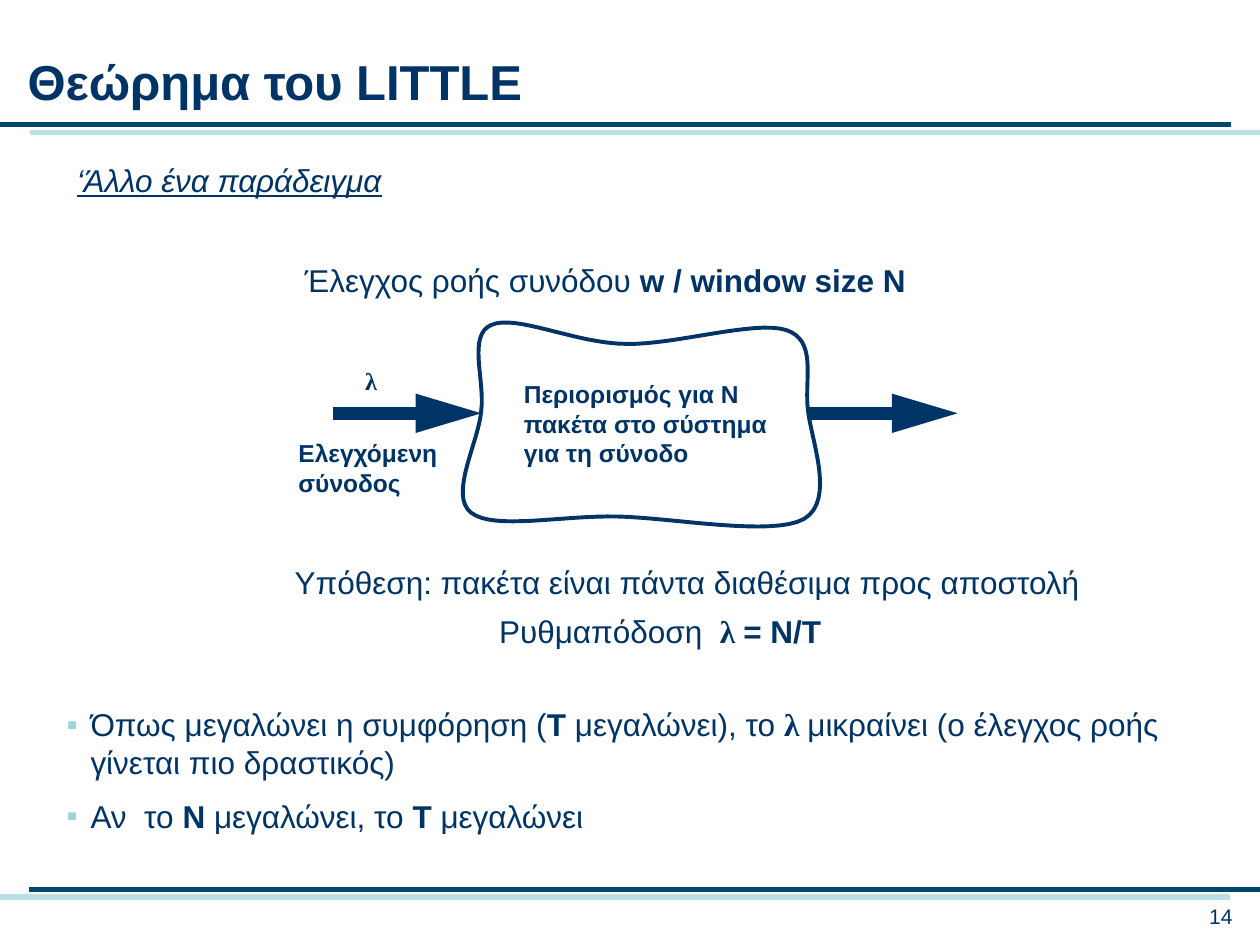
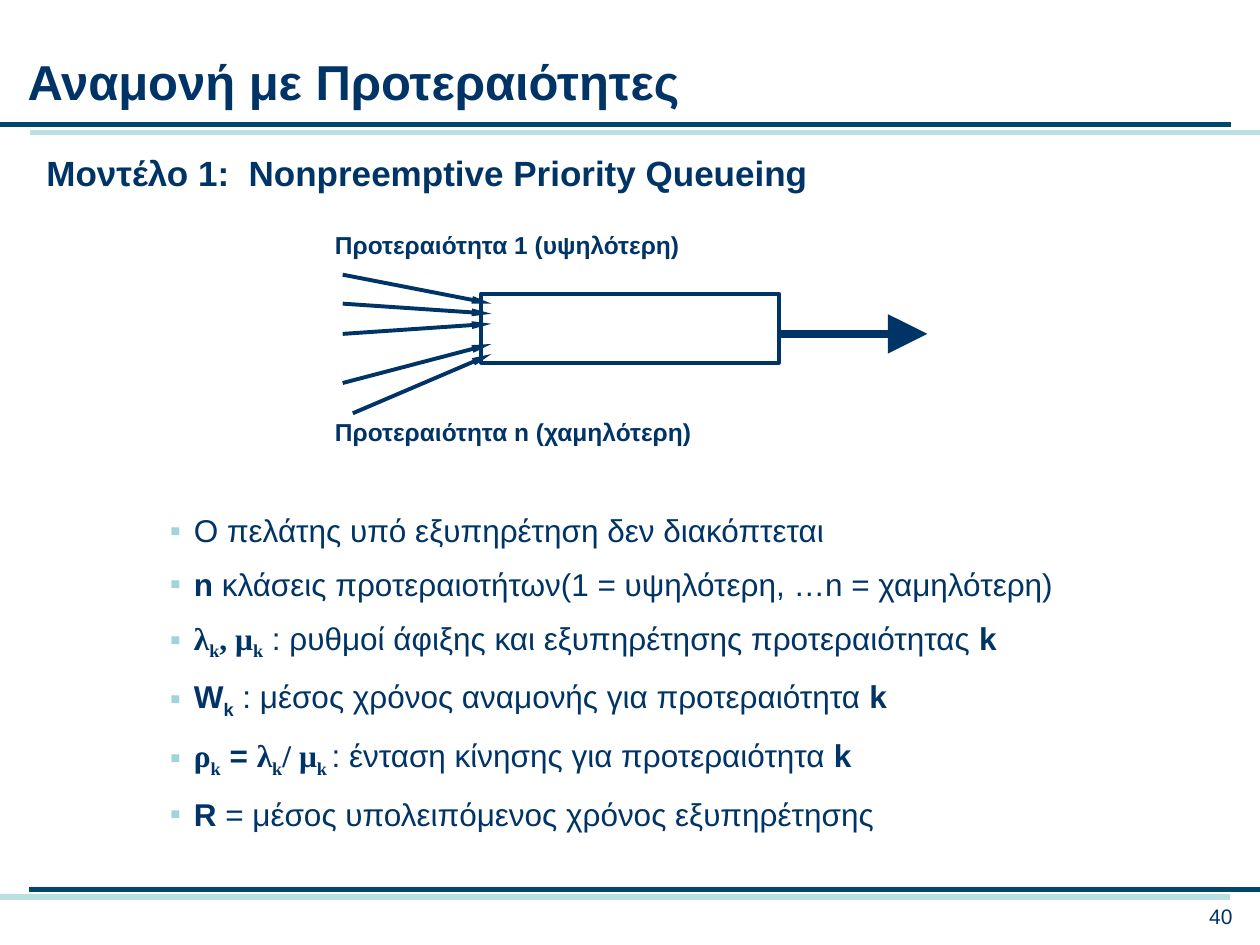
import pptx
import pptx.util
import pptx.dml.color
import pptx.enum.shapes
import pptx.enum.text
import pptx.oxml.ns
import lxml.etree

Inches = pptx.util.Inches
colour = pptx.dml.color.RGBColor.from_string
qn = pptx.oxml.ns.qn
STRAIGHT = pptx.enum.shapes.MSO_CONNECTOR.STRAIGHT
ALIGN = pptx.enum.text.PP_ALIGN

NAVY = "003366"
RULE = "00476A"
PALE = "BBE0E3"
BULLET = "A0D4D8"
FORMATS = {
    "b": {"bold": True},
    "i": {"italic": True},
    "u": {"underline": True},
    "t": {"name": "Times New Roman"},
}


def write(slide, place, paragraphs, size, align=ALIGN.LEFT, bullets=False):
    box = slide.shapes.add_textbox(*[Inches(length) for length in place])
    frame = box.text_frame
    frame.word_wrap = True
    for index, spans in enumerate(paragraphs):
        para = frame.add_paragraph() if index else frame.paragraphs[0]
        para.alignment = align
        if index:
            para.space_before = pptx.util.Pt(9)
        if bullets:
            properties = para._p.get_or_add_pPr()
            properties.set("marL", str(Inches(0.19)))
            properties.set("indent", str(Inches(-0.19)))
            tint = lxml.etree.SubElement(properties, qn("a:buClr"))
            lxml.etree.SubElement(tint, qn("a:srgbClr"), val=BULLET)
            lxml.etree.SubElement(properties, qn("a:buFont"), typeface="Arial")
            lxml.etree.SubElement(properties, qn("a:buChar"), char="▪")
        for text, marks in spans:
            span = para.add_run()
            span.text = text
            values = {"name": "Arial", "size": pptx.util.Pt(size)}
            for mark in marks:
                values.update(FORMATS.get(mark, {}))
            for name, value in values.items():
                setattr(span.font, name, value)
            span.font.color.rgb = colour(NAVY)
            if "s" in marks:
                span._r.get_or_add_rPr().set("baseline", "-25000")


def stroke(shape, width, hex_value=NAVY, head_width=None):
    if hasattr(shape, "fill"):
        shape.fill.background()
    shape.line.color.rgb = colour(hex_value)
    shape.line.width = pptx.util.Pt(width)
    properties = shape._element.spPr
    if head_width:
        lxml.etree.SubElement(properties.find(qn("a:ln")), qn("a:tailEnd"),
                              type="triangle", w=head_width, len="lg")
    lxml.etree.SubElement(properties, qn("a:effectLst"))


deck = pptx.Presentation()
deck.slide_width = Inches(10)
deck.slide_height = Inches(7.5)

rules = [
    (0.24, 10, 1.05, PALE),
    (0, 9.77, 0.99, RULE),
    (0, 9.76, 7.12, PALE),
    (0.23, 10, 7.06, RULE),
]
pages = []
for title, number in [("Θεώρημα του LITTLE", "14"), ("Αναμονή με Προτεραιότητες", "40")]:
    page = deck.slides.add_slide(deck.slide_layouts[6])
    pages.append(page)
    for left, right, height, hex_value in rules:
        rule = page.shapes.add_connector(
            STRAIGHT, Inches(left), Inches(height), Inches(right), Inches(height))
        stroke(rule, 3, hex_value)
    write(page, (0.12, 0.36, 9.29, 0.57), [[(title, "b")]], 28)
    write(page, (8.78, 7.12, 1.1, 0.3), [[(number, "")]], 12, ALIGN.RIGHT)
little, priority = pages

cloud_start = (3.82, 3.26)
cloud_curves = [
    [(3.85, 3.01), (3.71, 2.66), (3.9, 2.58)],
    [(4.09, 2.49), (4.58, 2.73), (4.97, 2.73)],
    [(5.35, 2.74), (5.99, 2.54), (6.24, 2.62)],
    [(6.48, 2.7), (6.39, 2.98), (6.41, 3.23)],
    [(6.43, 3.48), (6.64, 3.97), (6.38, 4.12)],
    [(6.13, 4.26), (5.34, 4.11), (4.9, 4.1)],
    [(4.46, 4.09), (3.92, 4.21), (3.74, 4.07)],
    [(3.56, 3.93), (3.8, 3.51), (3.82, 3.26)],
]
STEPS = 16
outline = []
start = cloud_start
for first, second, end in cloud_curves:
    corners = [start, first, second, end]
    for step in range(1, STEPS + 1):
        t = step / STEPS
        weights = [(1 - t) ** 3, 3 * t * (1 - t) ** 2, 3 * t ** 2 * (1 - t), t ** 3]
        outline.append([
            Inches(sum(weight * corner[axis] for weight, corner in zip(weights, corners)))
            for axis in range(2)])
    start = end

for left in (2.64, 6.42):
    flow = little.shapes.add_connector(
        STRAIGHT, Inches(left), Inches(3.28), Inches(left + 1.18), Inches(3.28))
    stroke(flow, 7.5, head_width="med")
builder = little.shapes.build_freeform(*[Inches(length) for length in cloud_start])
builder.add_line_segments(outline, close=True)
stroke(builder.convert_to_shape(), 2.25)

little_texts = [
    ((0.51, 1.23, 4.8, 0.4), [("‘Άλλο ένα παράδειγμα", "iu")], 18, ALIGN.LEFT),
    ((4.06, 2.96, 2.36, 0.81),
     [("Περιορισμός για N πακέτα στο σύστημα για τη σύνοδο", "b")], 14, ALIGN.LEFT),
    ((2.8, 2.86, 0.55, 0.33), [("λ", "bt")], 14, ALIGN.LEFT),
    ((2.27, 3.43, 1.48, 0.57), [("Ελεγχόμενη σύνοδος", "b")], 14, ALIGN.LEFT),
    ((2.32, 2.02, 5.59, 0.4),
     [("Έλεγχος ροής συνόδου ", ""), ("w / window size N", "b")], 18, ALIGN.LEFT),
    ((2.24, 4.42, 6.46, 0.4),
     [("Υπόθεση: πακέτα είναι πάντα διαθέσιμα προς αποστολή", "")], 18, ALIGN.LEFT),
    ((2.01, 4.81, 6.46, 0.4),
     [("Ρυθμαπόδοση  ", ""), ("λ ", "bt"), ("= Ν/Τ", "b")], 18, ALIGN.CENTER),
]
for place, spans, size, align in little_texts:
    write(little, place, [spans], size, align)

write(little, (0.43, 5.55, 9.29, 1.16), [
    [("Όπως μεγαλώνει η συμφόρηση (", ""), ("T ", "b"), ("μεγαλώνει), το ", ""),
     ("λ ", "bt"), ("μικραίνει (ο έλεγχος ροής γίνεται πιο δραστικός)", "")],
    [("Αν  το ", ""), ("N ", "b"), ("μεγαλώνει, το ", ""), ("T ", "b"), ("μεγαλώνει", "")],
], 18, bullets=True)

write(priority, (0.27, 1.15, 6.5, 0.44),
      [[("Μοντέλο 1:  Nonpreemptive Priority Queueing", "b")]], 20)
write(priority, (2.56, 1.78, 3.07, 0.34), [[("Προτεραιότητα 1 (υψηλότερη)", "b")]], 14)
write(priority, (2.56, 3.26, 3.77, 0.34), [[("Προτεραιότητα n (χαμηλότερη)", "b")]], 14)

queue = priority.shapes.add_shape(
    pptx.enum.shapes.MSO_SHAPE.RECTANGLE,
    Inches(3.82), Inches(2.33), Inches(2.36), Inches(0.55))
stroke(queue, 2.25)
arrows = [(6.18, 2.65, 7.36, 2.65, 4.5, "lg")]
for left, top, slot in [(2.72, 2.18, 0), (2.72, 2.41, 1), (2.72, 2.65, 2),
                        (2.72, 3.04, 4), (2.8, 3.28, 5)]:
    arrows.append((left, top, 3.9, 2.41 + 0.08 * slot, 2.25, "sm"))
for left, top, right, bottom, width, head_width in arrows:
    arrow = priority.shapes.add_connector(
        STRAIGHT, Inches(left), Inches(top), Inches(right), Inches(bottom))
    stroke(arrow, width, head_width=head_width)

write(priority, (1.25, 4.01, 7.97, 2.68), [
    [("Ο πελάτης υπό εξυπηρέτηση δεν διακόπτεται", "")],
    [("n ", "b"), ("κλάσεις προτεραιοτήτων(1 = υψηλότερη, …n = χαμηλότερη)", "")],
    [("λ", "bt"), ("k", "bts"), (", μ", "bt"), ("k", "bts"),
     (" : ρυθμοί άφιξης και εξυπηρέτησης προτεραιότητας ", ""), ("k", "b")],
    [("W", "b"), ("k", "bs"), (" : μέσος χρόνος αναμονής για προτεραιότητα ", ""), ("k", "b")],
    [("ρ", "bt"), ("k", "bts"), (" = ", "b"), ("λ", "bt"), ("k", "bts"), ("/ μ", "bt"),
     ("k ", "bts"), (": ένταση κίνησης για προτεραιότητα ", ""), ("k", "b")],
    [("R", "b"), (" = μέσος υπολειπόμενος χρόνος εξυπηρέτησης", "")],
], 18, bullets=True)

deck.save("out.pptx")
